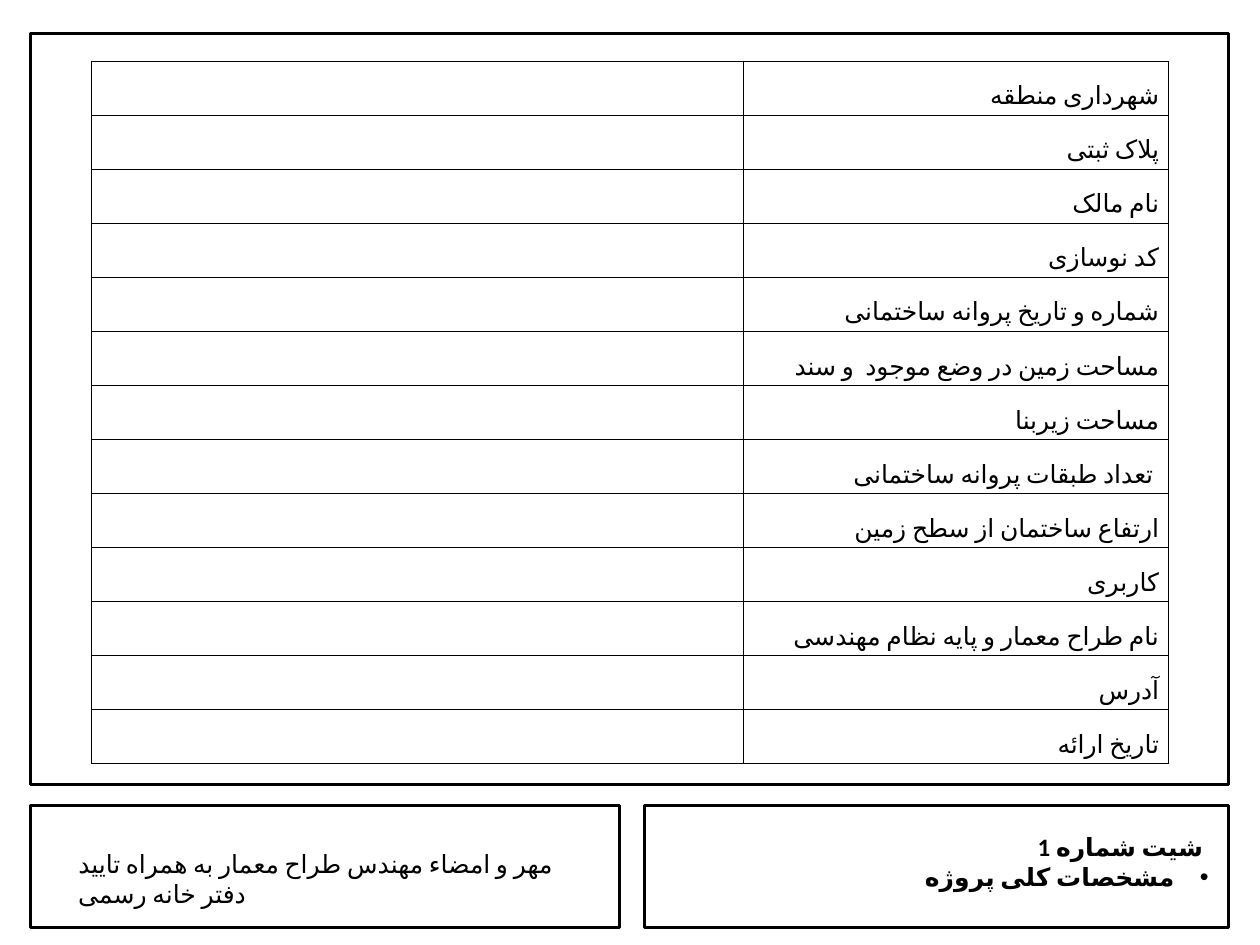
"""Builds the project details sheet with its form table and title block."""
from dataclasses import dataclass

from lxml import etree
from pptx import Presentation
from pptx.dml.color import RGBColor
from pptx.enum import shapes, text
from pptx.oxml import ns
from pptx.util import Inches, Pt


@dataclass(frozen=True)
class Theme:
    ink: RGBColor = RGBColor(0, 0, 0)
    font: str = "Calibri"
    size: Pt = Pt(20)
    frame_line: Pt = Pt(2.25)
    grid_line: Pt = Pt(1)


theme = Theme()


def write(paragraph, content, align=None, rtl=False, bold=False, spacing=None, bullet=None):
    run = paragraph.add_run()
    run.text = content
    run.font.name = theme.font
    run.font.size = theme.size
    run.font.bold = bold
    run.font.color.rgb = theme.ink
    run_properties = run._r.get_or_add_rPr()
    run_properties.set("lang", "fa-IR")
    etree.SubElement(run_properties, ns.qn("a:cs"), typeface=theme.font)
    paragraph.alignment = align
    paragraph.line_spacing = spacing
    properties = paragraph._p.get_or_add_pPr()
    if rtl:
        properties.set("rtl", "1")
    if bullet:
        properties.set("marL", str(Inches(0.38)))
        properties.set("indent", str(Inches(-0.38)))
        etree.SubElement(properties, ns.qn("a:buFont"), typeface="Arial")
        etree.SubElement(properties, ns.qn("a:buChar"), char=bullet)


def draw_borders(cell):
    properties = cell._tc.get_or_add_tcPr()
    for side in ("lnL", "lnR", "lnT", "lnB"):
        border = etree.SubElement(properties, ns.qn(f"a:{side}"), w=str(theme.grid_line))
        fill = etree.SubElement(border, ns.qn("a:solidFill"))
        etree.SubElement(fill, ns.qn("a:srgbClr"), val=str(theme.ink))


deck = Presentation()
deck.slide_width = Inches(14)
deck.slide_height = Inches(10.5)
slide = deck.slides.add_slide(deck.slide_layouts[5])

frames = [
    (7.16, 8.95, 6.49, 1.36),
    (0.34, 8.95, 6.54, 1.36),
    (0.34, 0.37, 13.31, 8.35),
]
for bounds in frames:
    frame = slide.shapes.add_shape(shapes.MSO_SHAPE.RECTANGLE, *map(Inches, bounds))
    frame.shadow.inherit = False
    frame.fill.background()
    frame.line.color.rgb = theme.ink
    frame.line.width = theme.frame_line

signature = slide.shapes.add_textbox(Inches(0.77), Inches(9.38), Inches(5.68), Inches(0.44))
signature.text_frame.word_wrap = True
write(signature.text_frame.paragraphs[0],
      "مهر و امضاء مهندس طراح معمار به همراه تایید دفتر خانه رسمی")

sheet_title = slide.shapes.title
sheet_title.left, sheet_title.top = Inches(3.61), Inches(9.19)
sheet_title.width, sheet_title.height = Inches(9.92), Inches(0.77)
heading = sheet_title.text_frame
heading.word_wrap = True
heading.auto_size = text.MSO_AUTO_SIZE.NONE
heading.vertical_anchor = text.MSO_ANCHOR.TOP
write(heading.paragraphs[0], "شیت شماره 1 ", align=text.PP_ALIGN.RIGHT, bold=True)
write(heading.add_paragraph(), "مشخصات کلی پروژه",
      align=text.PP_ALIGN.RIGHT, rtl=True, bold=True, bullet="•")

labels = [
    "شهرداری منطقه",
    "پلاک ثبتی",
    "نام مالک",
    "کد نوسازی",
    "شماره و تاریخ پروانه ساختمانی",
    "مساحت زمین در وضع موجود  و سند",
    "مساحت زیربنا",
    " تعداد طبقات پروانه ساختمانی ",
    "ارتفاع ساختمان از سطح زمین",
    "کاربری",
    "نام طراح معمار و پایه نظام مهندسی ",
    "آدرس",
    "تاریخ ارائه",
]
form = slide.shapes.add_table(len(labels), 2, Inches(1.02), Inches(0.68),
                              Inches(11.96), Inches(7.8)).table
form.first_row = False
form.horz_banding = False
form.columns[0].width = Inches(7.24)
form.columns[1].width = Inches(4.72)
for row, label in zip(form.rows, labels):
    row.height = Inches(0.6)
    for cell in row.cells:
        draw_borders(cell)
        cell.fill.background()
    write(row.cells[1].text_frame.paragraphs[0], label,
          align=text.PP_ALIGN.JUSTIFY, rtl=True, spacing=1.5)

deck.save("out.pptx")
